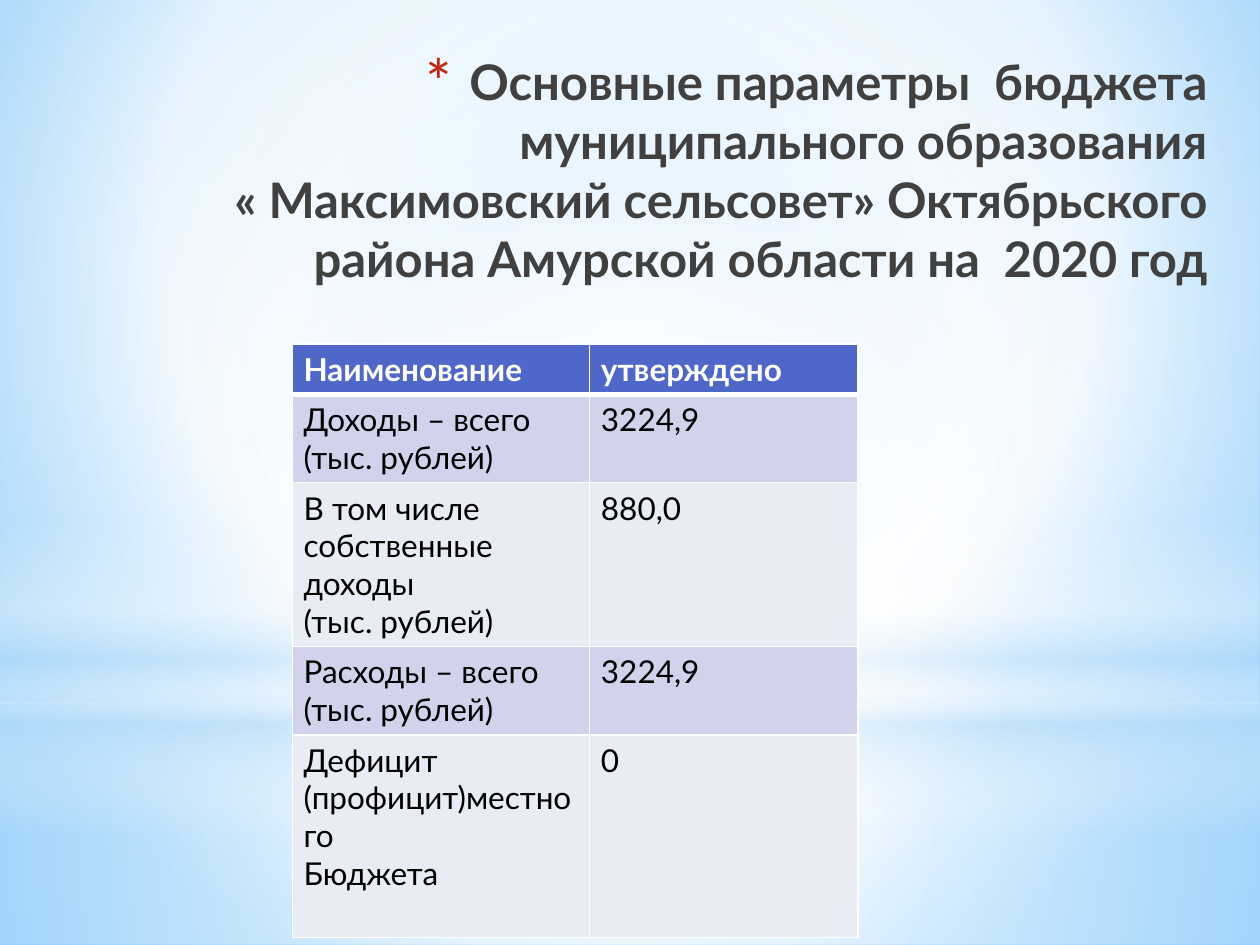
from dataclasses import dataclass

from lxml.etree import SubElement
from pptx import Presentation
from pptx.dml.color import RGBColor
from pptx.enum.shapes import MSO_SHAPE
from pptx.enum.text import MSO_ANCHOR, PP_ALIGN
from pptx.oxml.ns import qn
from pptx.util import Inches, Pt


@dataclass(frozen=True)
class Theme:
    font: str = "Lato"
    title_size: int = 28
    cell_size: int = 18
    title: str = "404040"
    bullet: str = "C3260C"
    white: str = "FFFFFF"
    text: str = "000000"
    sky: str = "B4DCFA"
    sky_mid: str = "9ED5FF"
    sky_deep: str = "5BB9FF"
    header: str = "4E67C8"
    bands: tuple = ("D0D3EB", "E9EBF5")


THEME = Theme()
CENTER = (50, 50, 50, 50)

TITLE = (
    "Основные параметры  бюджета муниципального образования",
    " « Максимовский сельсовет» Октябрьского района Амурской области на  2020 год",
)
COL_WIDTHS = (2.36, 2.13)
ROW_HEIGHTS = (0.39, 0.67, 1.24, 0.67, 1.61)
ROWS = (
    (("Наименование",), ("утверждено",)),
    (("Доходы – всего", "(тыс. рублей)"), ("3224,9",)),
    (("В том числе", "собственные доходы", "(тыс. рублей)"), ("880,0",)),
    (("Расходы – всего", "(тыс. рублей)"), ("3224,9",)),
    (("Дефицит (профицит)местного", "Бюджета"), ("0",)),
)


def child(parent, tag, **attrs):
    el = SubElement(parent, qn(tag))
    for name, value in attrs.items():
        el.set(name, str(value))
    return el


def set_gradient(props, stops, focus=None):
    """Swap a solid fill for (position, colour, opacity) stops: radial, or vertical without focus."""
    solid = props.find(qn("a:solidFill"))
    grad = child(props, "a:gradFill", rotWithShape=1)
    props.replace(solid, grad)
    stop_list = child(grad, "a:gsLst")
    for pos, color, opacity in stops:
        stop = child(stop_list, "a:gs", pos=pos * 1000)
        clr = child(stop, "a:srgbClr", val=color)
        if opacity < 100:
            child(clr, "a:alpha", val=opacity * 1000)
    if focus:
        sides = {side: v * 1000 for side, v in zip("ltrb", focus)}
        child(child(grad, "a:path", path="circle"), "a:fillToRect", **sides)
    else:
        child(grad, "a:lin", ang=90 * 60000, scaled=0)


def add_glow(slide, kind, top, height, stops, focus=None):
    s = slide.shapes.add_shape(kind, 0, Inches(top), Inches(10), Inches(height))
    s.shadow.inherit = False
    s.line.fill.background()
    s.fill.solid()
    set_gradient(s._element.spPr, stops, focus)


def add_run(p, text, size, color, bold):
    r = p.add_run()
    r.text = text
    r.font.name = THEME.font
    r.font.size = Pt(size)
    r.font.bold = bold
    r.font.color.rgb = RGBColor.from_string(color)


def add_background(slide):
    w, sky = THEME.white, THEME.sky
    slide.background.fill.solid()
    set_gradient(
        slide._element.find(".//" + qn("p:bgPr")),
        ((0, THEME.sky_mid, 100), (60, w, 100), (100, THEME.sky_deep, 100)),
        (20, 10, 20, 60),
    )
    # Ground, sky, horizon and central light
    add_glow(slide, MSO_SHAPE.RECTANGLE, 5.58, 1.92,
             ((0, w, 91), (37, w, 76), (100, sky, 79)), CENTER)
    add_glow(slide, MSO_SHAPE.RECTANGLE, 0, 5.58,
             ((0, w, 89), (48, w, 62), (100, sky, 79)), CENTER)
    add_glow(slide, MSO_SHAPE.RECTANGLE, 4.12, 2.5,
             ((0, w, 0), (29, w, 30), (45, sky, 40),
              (55, w, 26), (65, sky, 60), (100, w, 0)))
    add_glow(slide, MSO_SHAPE.OVAL, 1.75, 5.58,
             ((0, w, 100), (56, w, 0)), CENTER)


def add_title(slide):
    s = slide.shapes.add_textbox(Inches(0.75), Inches(0.36), Inches(8.93), Inches(1.25))
    tf = s.text_frame
    tf.word_wrap = True
    tf.vertical_anchor = MSO_ANCHOR.TOP
    p = tf.paragraphs[0]
    p.alignment = PP_ALIGN.RIGHT
    # Hanging asterisk bullet
    props = p._p.get_or_add_pPr()
    props.set("marL", str(Inches(0.35)))
    props.set("indent", str(-Inches(0.35)))
    child(child(props, "a:buClr"), "a:srgbClr", val=THEME.bullet)
    child(props, "a:buSzPct", val=128000)
    child(props, "a:buFont", typeface=THEME.font)
    child(props, "a:buChar", char="*")
    for i, line in enumerate(TITLE):
        if i:
            p.add_line_break()
        add_run(p, line, THEME.title_size, THEME.title, True)


def set_borders(cell, top, bottom):
    props = cell._tc.get_or_add_tcPr()
    for side, width in (("L", 1), ("R", 1), ("T", top), ("B", bottom)):
        ln = child(props, "a:ln" + side, w=Pt(width))
        child(child(ln, "a:solidFill"), "a:srgbClr", val=THEME.white)


def fill_cell(cell, lines, row):
    is_header = row == 0
    set_borders(cell, 3 if row == 1 else 1, 3 if is_header else 1)
    cell.fill.solid()
    fill = THEME.header if is_header else THEME.bands[(row - 1) % 2]
    cell.fill.fore_color.rgb = RGBColor.from_string(fill)
    cell.margin_left = cell.margin_right = Inches(0.09)
    cell.margin_top = cell.margin_bottom = Inches(0.05)
    tf = cell.text_frame
    for i, line in enumerate(lines):
        p = tf.add_paragraph() if i else tf.paragraphs[0]
        add_run(p, line, THEME.cell_size, THEME.white if is_header else THEME.text, is_header)


def add_budget_table(slide):
    s = slide.shapes.add_table(
        len(ROWS), len(COL_WIDTHS), Inches(2.32), Inches(2.73),
        Inches(sum(COL_WIDTHS)), Inches(sum(ROW_HEIGHTS)))
    table = s.table
    table.horz_banding = False
    for column, width in zip(table.columns, COL_WIDTHS):
        column.width = Inches(width)
    for r, (height, cells) in enumerate(zip(ROW_HEIGHTS, ROWS)):
        table.rows[r].height = Inches(height)
        for c, lines in enumerate(cells):
            fill_cell(table.cell(r, c), lines, r)


def main():
    prs = Presentation()
    prs.slide_width, prs.slide_height = Inches(10), Inches(7.5)
    slide = prs.slides.add_slide(prs.slide_layouts[6])
    add_background(slide)
    add_title(slide)
    add_budget_table(slide)
    prs.save("out.pptx")


if __name__ == "__main__":
    main()
